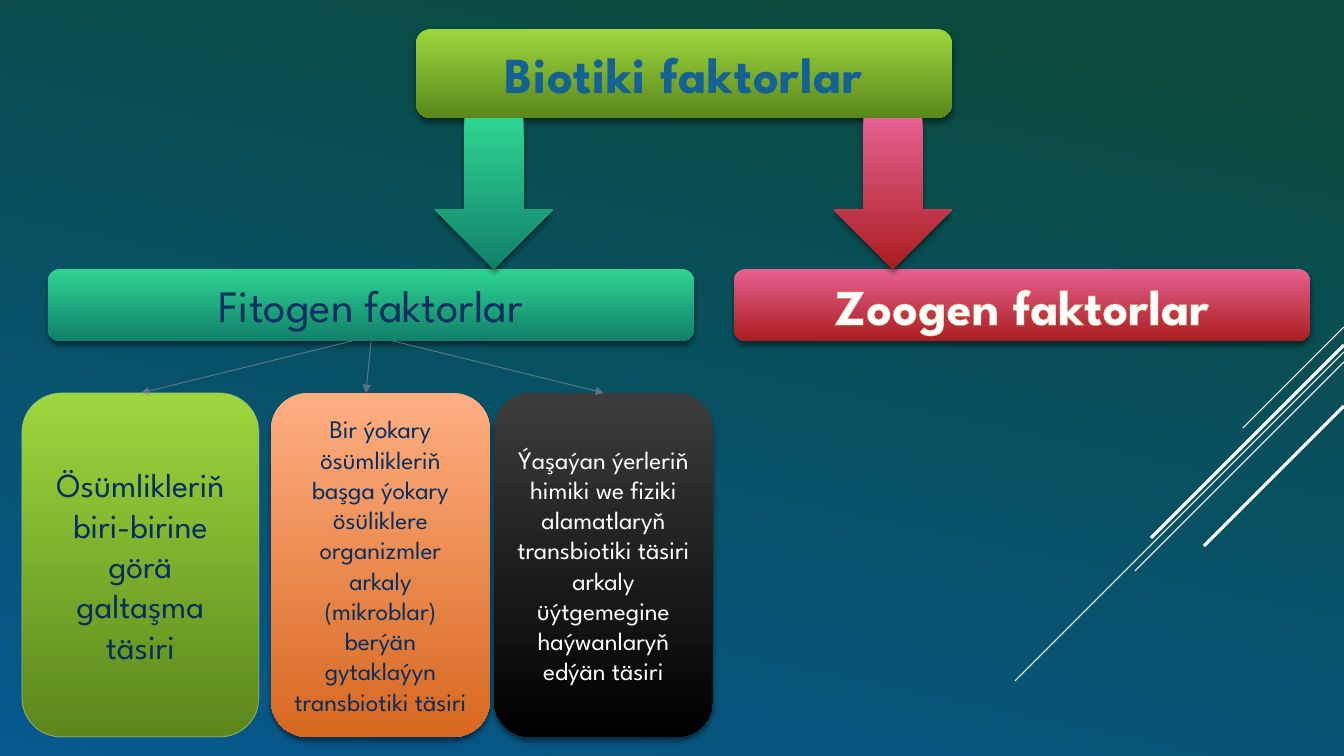
"""Builds a slide that divides biotic factors into phytogenic and zoogenic ones."""
import pptx
import pptx.dml.color
import pptx.enum.shapes
import pptx.enum.text
import pptx.oxml
import pptx.oxml.ns
import pptx.util

THEME = {
    "font": "League Spartan",
    "title_size": 36, "branch_size": 32, "lead_size": 24, "card_size": 18,
    "hairline": 0.75, "stroke": 2.25,
    "backdrop": ("0A4B3E", "06588E"),
    "lime": ("9DD63D", "5B871B"),
    "teal": ("2ED592", "11806A"),
    "rose": ("E66091", "AA1E1F"),
    "orange": ("FFAE82", "D7681F"),
    "black": ("3C3C3C", "000000"),
    "blue": "146194", "navy": "052F61", "white": "FFFFFF",
    "text_edge": "E87D37", "card_edge": "A4BB8B", "link": "89919C",
}
WIDTH, HEIGHT = 1344, 756
EMU_PER_PX = 914400 / 100.8

STREAKS = [(327, 101, "hairline"), (352, 329, "hairline"), (362, 209, "hairline"),
           (345, 193, "stroke"), (406, 140, "stroke")]
FACTORS = [
    {"text": "Biotiki faktorlar", "box": (416, 29, 536, 89), "fill": "lime",
     "size": "title_size", "color": "blue", "bold": True, "spacing": 50},
    {"text": "Fitogen faktorlar", "box": (48, 269, 646, 72), "fill": "teal",
     "size": "branch_size", "color": "navy"},
    {"text": "Zoogen faktorlar", "box": (734, 269, 576, 72), "fill": "rose",
     "size": "title_size", "color": "white", "bold": True, "edge": "text_edge"},
]
BRANCH_ARROWS = [(435, "teal"), (834, "rose")]
ARROW_TOP, ARROW_WIDTH, ARROW_HEIGHT = 118, 118, 151
CARD_TOP, CARD_HEIGHT = 393, 344
CARDS = [
    {"text": "Ösümlikleriň biri-birine görä galtaşma täsiri", "left": 22, "width": 237,
     "fill": "lime", "size": "lead_size", "color": "navy", "outline": "card_edge"},
    {"text": "Bir ýokary ösümlikleriň başga ýokary ösüliklere organizmler arkaly "
             "(mikroblar) berýän gytaklaýyn transbiotiki täsiri", "left": 271, "width": 219,
     "fill": "orange", "size": "card_size", "color": "navy"},
    {"text": "Ýaşaýan ýerleriň himiki we fiziki alamatlaryň transbiotiki täsiri arkaly "
             "üýtgemegine haýwanlaryň edýän täsiri", "left": 494, "width": 219,
     "fill": "black", "size": "card_size", "color": "white"},
]
LINK_TOP = 341
LINKS = [(352, 141), (371, 366), (393, 604)]
SHADOW = ('<a:outerShdw blurRad="50800" dist="38100" dir="5400000" rotWithShape="0">'
          '<a:srgbClr val="000000"><a:alpha val="46000"/></a:srgbClr></a:outerShdw>')


def px(length):
    return pptx.util.Emu(round(length * EMU_PER_PX))


def rgb(name):
    return pptx.dml.color.RGBColor.from_string(THEME[name])


def element(tag, attributes="", content=""):
    namespace = pptx.oxml.ns.nsdecls("a")
    return pptx.oxml.parse_xml(f"<a:{tag} {namespace} {attributes}>{content}</a:{tag}>")


def paint_gradient(fill, name, angle=270, start=0):
    fill.gradient()
    fill.gradient_angle = angle
    for stop, position, color in zip(fill.gradient_stops, (start, 1), THEME[name]):
        stop.position = position
        stop.color.rgb = pptx.dml.color.RGBColor.from_string(color)


def paint_line(line, color, width, opacity=100):
    line.color.rgb = rgb(color)
    line.width = pptx.util.Pt(THEME[width])
    if opacity < 100:
        tint = line.fill._xPr.find(".//" + pptx.oxml.ns.qn("a:srgbClr"))
        tint.append(element("alpha", f'val="{opacity * 1000}"'))


def add_block(slide, preset, box, fill, outline=None):
    block = slide.shapes.add_shape(preset, *map(px, box))
    paint_gradient(block.fill, fill)
    block.shadow.inherit = False
    if outline:
        paint_line(block.line, outline, "hairline", 60)
    else:
        block.line.fill.background()
        effects = block._element.spPr.find(pptx.oxml.ns.qn("a:effectLst"))
        effects.append(pptx.oxml.parse_xml(SHADOW.replace(
            "<a:outerShdw", "<a:outerShdw " + pptx.oxml.ns.nsdecls("a"), 1)))
    return block


def add_label(slide, part, box):
    block = add_block(slide, pptx.enum.shapes.MSO_SHAPE.ROUNDED_RECTANGLE, box,
                      part["fill"], part.get("outline"))
    frame = block.text_frame
    frame.word_wrap = True
    frame.vertical_anchor = pptx.enum.text.MSO_ANCHOR.MIDDLE
    paragraph = frame.paragraphs[0]
    paragraph.alignment = pptx.enum.text.PP_ALIGN.CENTER
    run = paragraph.add_run()
    run.text = part["text"]
    run.font.name = THEME["font"]
    run.font.size = pptx.util.Pt(THEME[part["size"]])
    run.font.bold = part.get("bold", False)
    run.font.color.rgb = rgb(part["color"])
    properties = run._r.get_or_add_rPr()
    if "spacing" in part:
        properties.set("spc", str(part["spacing"]))
    if "edge" in part:
        color = f'<a:solidFill><a:srgbClr val="{THEME[part["edge"]]}"/></a:solidFill>'
        properties.insert(0, element("ln", 'w="10160"', color))


def add_line(slide, start, end, color, width, opacity=100):
    line = slide.shapes.add_connector(
        pptx.enum.shapes.MSO_CONNECTOR.STRAIGHT, *map(px, (*start, *end)))
    paint_line(line.line, color, width, opacity)
    line._element.spPr.append(element("effectLst"))
    return line


def main():
    deck = pptx.Presentation()
    deck.slide_width, deck.slide_height = px(WIDTH), px(HEIGHT)
    slide = deck.slides.add_slide(deck.slide_layouts[6])
    paint_gradient(slide.background.fill, "backdrop", angle=258, start=0.1)

    for top, run, width in STREAKS:
        add_line(slide, (WIDTH, top), (WIDTH - run, top + run), "white", width)
    for factor in FACTORS:
        add_label(slide, factor, factor["box"])
    for left, fill in BRANCH_ARROWS:
        add_block(slide, pptx.enum.shapes.MSO_SHAPE.DOWN_ARROW,
                  (left, ARROW_TOP, ARROW_WIDTH, ARROW_HEIGHT), fill)
    for card in CARDS:
        add_label(slide, card, (card["left"], CARD_TOP, card["width"], CARD_HEIGHT))
    for start, end in LINKS:
        link = add_line(slide, (start, LINK_TOP), (end, CARD_TOP), "link", "hairline", 60)
        link.line._get_or_add_ln().append(element("tailEnd", 'type="triangle"'))

    deck.save("out.pptx")


if __name__ == "__main__":
    main()
